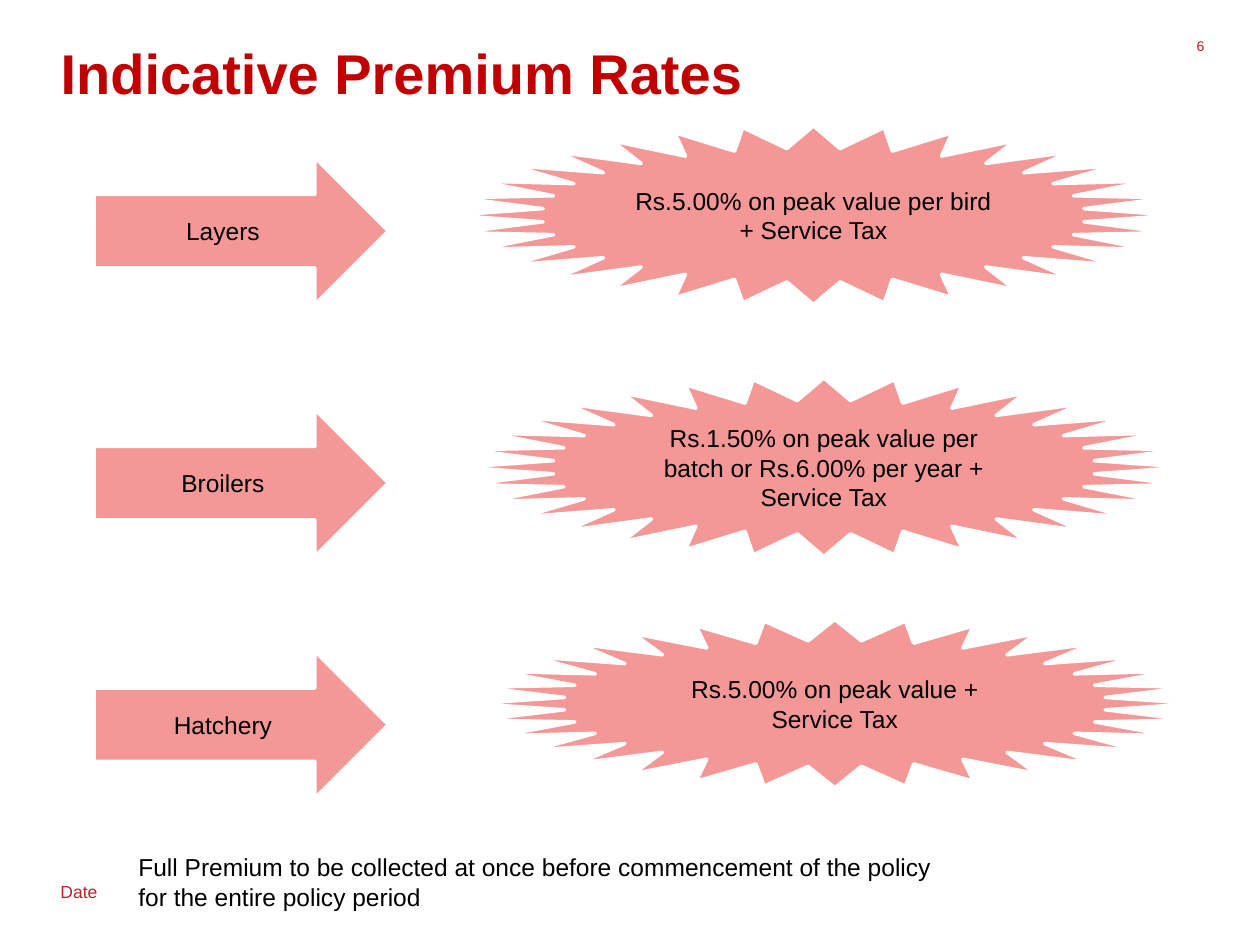
from pptx import Presentation
from pptx.dml.color import RGBColor
from pptx.enum.shapes import MSO_SHAPE
from pptx.enum.text import MSO_ANCHOR, PP_ALIGN
from pptx.util import Cm, Pt

ARROW, STAR, RECT = (MSO_SHAPE.RIGHT_ARROW, MSO_SHAPE.STAR_32_POINT,
                     MSO_SHAPE.RECTANGLE)
TOP, MIDDLE = MSO_ANCHOR.TOP, MSO_ANCHOR.MIDDLE
LEFT, CENTER, RIGHT = PP_ALIGN.LEFT, PP_ALIGN.CENTER, PP_ALIGN.RIGHT

# Content
TITLE = "Indicative Premium Rates"
# bird type, rate, arrow top, star left, star height (cm)
RATES = [
    ("Layers", "Rs.5.00% on peak value per bird + Service Tax",
     3.18, 9.1, 3.6),
    ("Broilers", "Rs.1.50% on peak value per batch or Rs.6.00% per year "
     "+ Service Tax", 8.26, 9.31, 3.6),
    ("Hatchery", "Rs.5.00% on peak value + Service Tax",
     13.13, 9.53, 3.39),
]
NOTE = ("Full Premium to be collected at once before commencement of the "
        "policy\nfor the entire policy period")
PINK, WHITE, BLACK = "F39896", "FFFFFF", "000000"
STAR_RISE = 0.64  # star top above arrow top


def color(code):
    return RGBColor.from_string(code)


def write(box, text, size, code, align=LEFT, anchor=TOP, bold=False):
    frame = box.text_frame
    frame.text = text
    frame.word_wrap = True
    frame.vertical_anchor = anchor
    for para in frame.paragraphs:
        para.alignment = align
        for run in para.runs:
            font = run.font
            font.name, font.size, font.bold = "Arial", Pt(size), bold
            font.color.rgb = color(code)
    return frame


def place(box, left, top, width, height):
    box.left, box.top = Cm(left), Cm(top)
    box.width, box.height = Cm(width), Cm(height)


def block(kind, area, text, fill, align=CENTER):
    shape = slide.shapes.add_shape(kind, *map(Cm, area))
    shape.shadow.inherit = False
    shape.fill.solid()
    shape.fill.fore_color.rgb = color(fill)
    shape.line.color.rgb = color(WHITE)
    shape.line.width = Pt(2)
    return write(shape, text, 14, BLACK, align, MIDDLE)


prs = Presentation()
prs.slide_width, prs.slide_height = Cm(25.4), Cm(19.05)
slide = prs.slides.add_slide(prs.slide_layouts[5])

# Date and page number
date = slide.shapes.add_textbox(Cm(0.97), Cm(17.58), Cm(1.27), Cm(0.71))
frame = write(date, "Date", 10, "BE2328")
frame.word_wrap = False
frame.paragraphs[0].line_spacing = 1.15
frame.paragraphs[0].space_after = Pt(10)

page = slide.shapes.add_textbox(Cm(23.72), Cm(0.76), Cm(0.56), Cm(0.51))
frame = write(page, "6", 8, "C21B17", RIGHT)
frame.margin_left = frame.margin_right = 0
frame.margin_top = frame.margin_bottom = 0

# Title
title = slide.shapes.title
place(title, 0.97, 1.22, 23.29, 1.45)
frame = write(title, TITLE, 32, "C00000", bold=True)
frame.paragraphs[0].line_spacing = Pt(22)

# One arrow and one star per rate
for name, rate, top, left, height in RATES:
    block(ARROW, (1.9, top, 5.93, 2.96), name, PINK)
    block(STAR, (left, top - STAR_RISE, 14.6, height), rate, PINK)

# Closing note with hanging indent
frame = block(RECT, (2.54, 16.93, 16.93, 1.69), NOTE, WHITE, LEFT)
for para in frame.paragraphs:
    props = para._p.get_or_add_pPr()
    props.set("marL", str(Cm(1.27)))
    props.set("indent", str(-Cm(1.27)))

prs.save("out.pptx")
